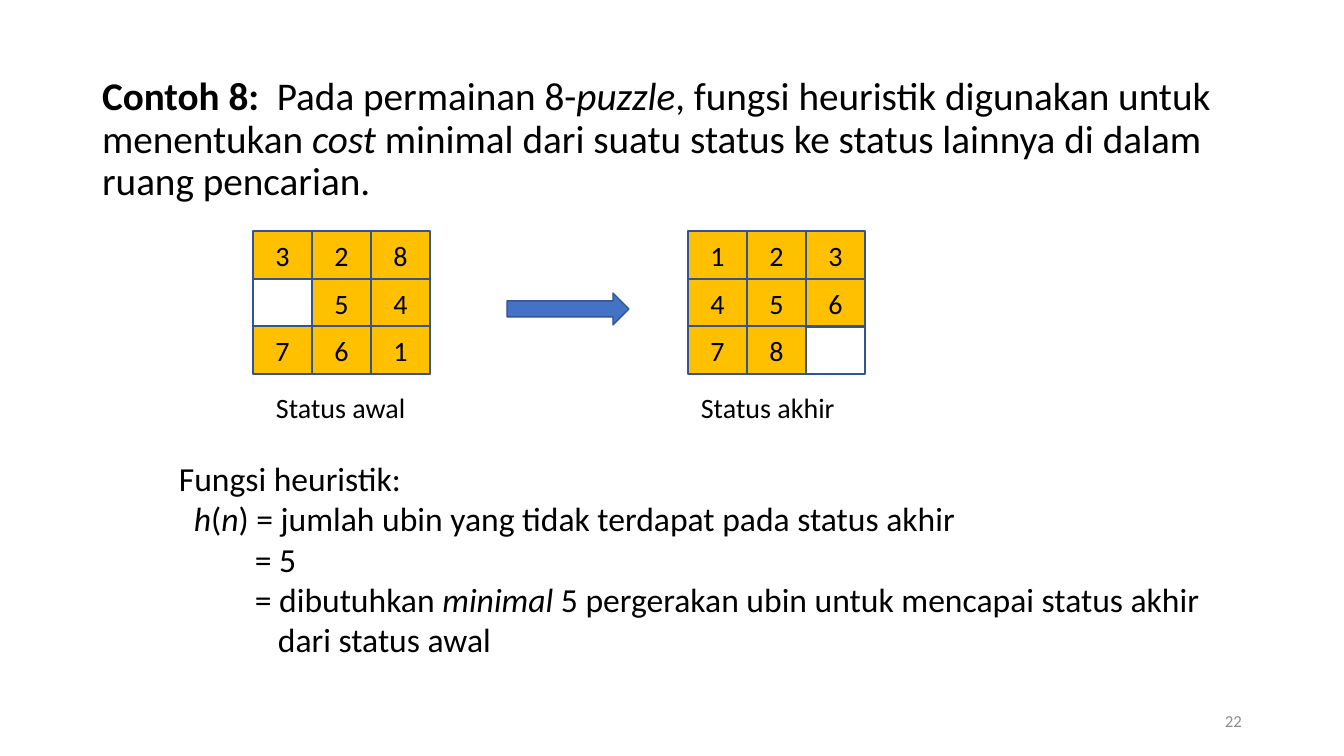
from pptx import Presentation
from pptx.dml.color import RGBColor
from pptx.enum.shapes import MSO_SHAPE
from pptx.enum.text import MSO_ANCHOR, MSO_AUTO_SIZE, PP_ALIGN
from pptx.util import Pt
from lxml import etree

RECT, ARROW = MSO_SHAPE.RECTANGLE, MSO_SHAPE.RIGHT_ARROW
TOP, MIDDLE = MSO_ANCHOR.TOP, MSO_ANCHOR.MIDDLE
LEFT, CENTER, RIGHT = PP_ALIGN.LEFT, PP_ALIGN.CENTER, PP_ALIGN.RIGHT
NO_AUTOFIT = MSO_AUTO_SIZE.NONE
DRAWING_NS = "http://schemas.openxmlformats.org/drawingml/2006/main"

INTRO = [
    ("Contoh 8:  ", "b"), ("Pada permainan 8-", ""), ("puzzle", "i"),
    (", fungsi heuristik digunakan untuk menentukan ", ""), ("cost", "i"),
    (" minimal dari suatu status ke status lainnya di dalam ruang pencarian.", ""),
]
HEURISTIC = [
    (0, [("Fungsi heuristik:", "")]),
    (15, [("h", "i"), ("(", ""), ("n", "i"),
          (") = jumlah ubin yang tidak terdapat pada status akhir", "")]),
    (76, [("= 5", "")]),
    (76, [("= dibutuhkan ", ""), ("minimal", "i"),
          (" 5 pergerakan ubin untuk mencapai status akhir", "")]),
    (99, [("dari status awal", "")]),
]
BOARDS = [
    (253, ["328", " 54", "761"]),
    (688, ["123", "456", "78 "]),
]
LABELS = [
    ("Status awal", (266, 386, 151, 44)),
    ("Status akhir", (691, 386, 155, 44)),
]
PAGE = "22"

ROW_TOPS = (231, 279, 326)
TILE_W, TILE_H = 59, 48
BLACK, GREY, GOLD, BLUE, NAVY = "000000", "8C8C8C", "FFC000", "4472C4", "325491"


def px(n):
    return round(n * 914400 / 100.8)


def box(values):
    return [px(v) for v in values]


def rgb(value):
    return RGBColor.from_string(value)


def write(p, runs, size, color=BLACK, align=LEFT):
    p.alignment = align
    for text, style in runs:
        r = p.add_run()
        r.text = text
        f = r.font
        f.name, f.size = "Calibri", Pt(size)
        f.bold, f.italic = style == "b", style == "i"
        f.color.rgb = rgb(color)


def indent(p, left):
    pPr = p._p.get_or_add_pPr()
    pPr.set("marL", str(px(left)))
    pPr.set("indent", "0")
    etree.SubElement(pPr, f"{{{DRAWING_NS}}}buNone")


def add_text(slide, at, wrap=True, anchor=TOP):
    tf = slide.shapes.add_textbox(*box(at)).text_frame
    tf.word_wrap = wrap
    tf.auto_size = NO_AUTOFIT
    tf.vertical_anchor = anchor
    return tf


def add_block(slide, kind, at, fill):
    sp = slide.shapes.add_shape(kind, *box(at))
    sp.shadow.inherit = False
    if fill:
        sp.fill.solid()
        sp.fill.fore_color.rgb = rgb(fill)
    else:
        sp.fill.background()
    sp.line.color.rgb = rgb(NAVY)
    sp.line.width = Pt(1)
    return sp


def add_board(slide, left, rows):
    for top, row in zip(ROW_TOPS, rows):
        for col, digit in enumerate(row):
            filled = digit != " "
            at = (left + col * TILE_W, top, TILE_W, TILE_H)
            sp = add_block(slide, RECT, at, GOLD if filled else None)
            if filled:
                tf = sp.text_frame
                tf.vertical_anchor = MIDDLE
                write(tf.paragraphs[0], [(digit, "")], 20, align=CENTER)


def main():
    prs = Presentation()
    prs.slide_width, prs.slide_height = px(1344), px(756)
    slide = prs.slides.add_slide(prs.slide_layouts[1])
    title = slide.shapes.title
    title.element.getparent().remove(title.element)

    body = slide.placeholders[1]
    body.left, body.top, body.width, body.height = box((92, 72, 1159, 609))
    tf = body.text_frame
    tf.auto_size = NO_AUTOFIT
    tf.vertical_anchor = TOP
    p = tf.paragraphs[0]
    indent(p, 0)
    p.line_spacing = 0.9
    p.space_before = Pt(0)
    write(p, INTRO, 28)

    tf = add_text(slide, (950, 701, 302, 40), anchor=MIDDLE)
    write(tf.paragraphs[0], [(PAGE, "")], 12, GREY, RIGHT)

    tf = add_text(slide, (169, 453, 1066, 214))
    for i, (left, runs) in enumerate(HEURISTIC):
        p = tf.add_paragraph() if i else tf.paragraphs[0]
        indent(p, left)
        write(p, runs, 24)

    for left, rows in BOARDS:
        add_board(slide, left, rows)
    for text, at in LABELS:
        tf = add_text(slide, at, wrap=False)
        write(tf.paragraphs[0], [(text, "")], 20)
    add_block(slide, ARROW, (507, 293, 122, 32), BLUE)

    prs.save("out.pptx")


if __name__ == "__main__":
    main()
